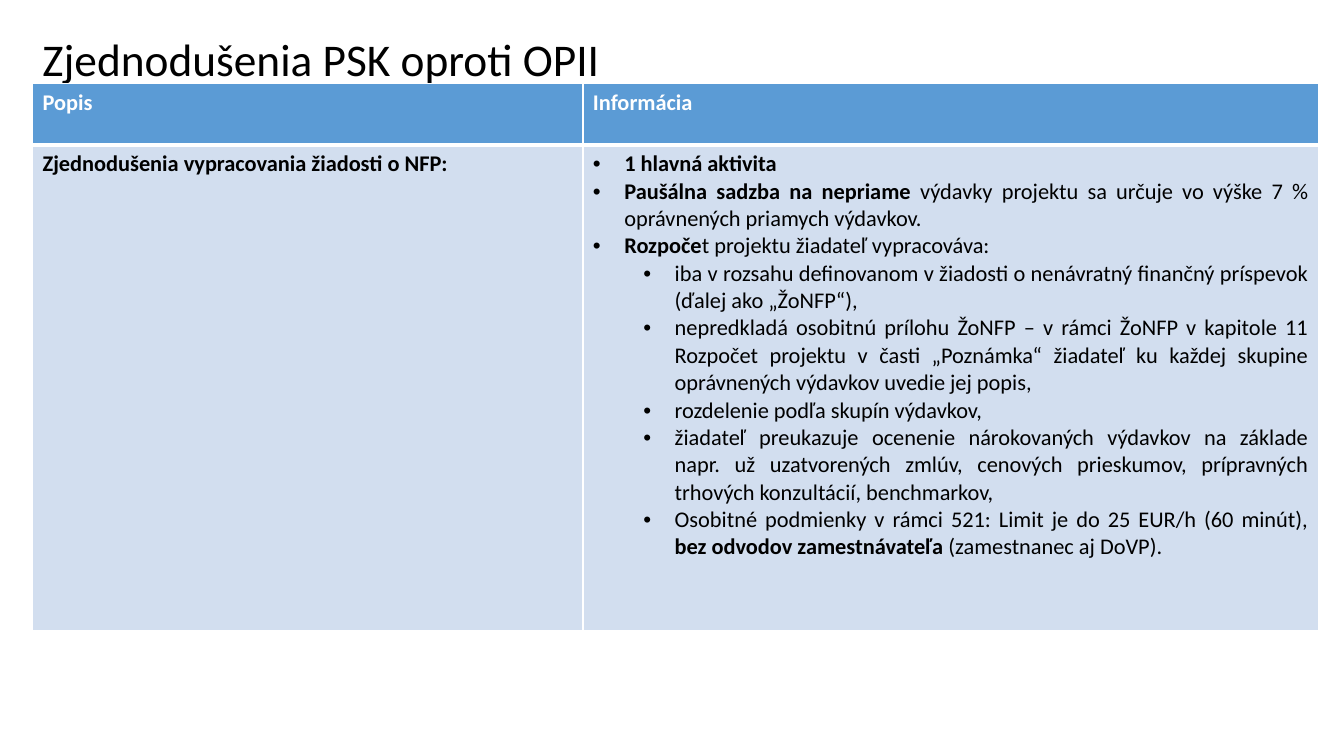
from dataclasses import dataclass

from lxml.etree import SubElement
from pptx import Presentation
from pptx.dml.color import RGBColor
from pptx.enum.text import MSO_ANCHOR, PP_ALIGN
from pptx.oxml.ns import qn
from pptx.slide import Slide
from pptx.table import Table, _Cell
from pptx.text.text import _Paragraph, _Run
from pptx.util import Cm, Pt

BLACK = RGBColor(0x00, 0x00, 0x00)
WHITE = RGBColor(0xFF, 0xFF, 0xFF)
HEADER_BLUE = RGBColor(0x5B, 0x9B, 0xD5)
BODY_BLUE = RGBColor(0xD2, 0xDE, 0xEF)

FONT = "Calibri"
LEFT = Cm(0.82)
COLUMN_WIDTHS = (Cm(13.87), Cm(18.54))
ROW_HEIGHTS = (Cm(1.55), Cm(12.22))
HEADINGS = ("Popis", "Informácia")
TOPIC = "Zjednodušenia vypracovania žiadosti o NFP:"


@dataclass(frozen=True)
class Span:
    text: str
    bold: bool = False


@dataclass(frozen=True)
class Bullet:
    level: int
    spans: tuple[Span, ...]


BULLETS = (
    Bullet(0, (Span("1 hlavná aktivita", True),)),
    Bullet(0, (
        Span("Paušálna sadzba na nepriame ", True),
        Span("výdavky projektu sa určuje vo výške 7 % oprávnených priamych výdavkov."),
    )),
    Bullet(0, (Span("Rozpoče", True), Span("t projektu žiadateľ vypracováva:"))),
    Bullet(1, (Span(
        "iba v rozsahu definovanom v žiadosti o nenávratný finančný príspevok "
        "(ďalej ako „ŽoNFP“), "
    ),)),
    Bullet(1, (Span(
        "nepredkladá osobitnú prílohu ŽoNFP – v rámci ŽoNFP v kapitole 11 "
        "Rozpočet projektu v časti „Poznámka“ žiadateľ ku každej skupine "
        "oprávnených výdavkov uvedie jej popis,"
    ),)),
    Bullet(1, (Span("rozdelenie podľa skupín výdavkov,"),)),
    Bullet(1, (Span(
        "žiadateľ preukazuje ocenenie nárokovaných výdavkov na základe napr. "
        "už uzatvorených zmlúv, cenových prieskumov, prípravných trhových "
        "konzultácií, benchmarkov,"
    ),)),
    Bullet(1, (
        Span("Osobitné podmienky v rámci 521: Limit je do 25 EUR/h (60 minút), "),
        Span("bez odvodov zamestnávateľa", True),
        Span(" (zamestnanec aj DoVP)."),
    )),
)


def format_run(run: _Run, size: float, color: RGBColor, bold: bool = False) -> None:
    run.font.name = FONT
    run.font.size = Pt(size)
    run.font.bold = bold
    run.font.color.rgb = color


def add_title(page: Slide) -> None:
    box = page.shapes.add_textbox(LEFT, Cm(0.82), Cm(25.4), Cm(1.3))
    frame = box.text_frame
    frame.word_wrap = True
    frame.vertical_anchor = MSO_ANCHOR.MIDDLE
    frame.text = "Zjednodušenia PSK oproti OPII"
    para = frame.paragraphs[0]
    para.line_spacing = 0.9
    format_run(para.runs[0], 32.4, BLACK)
    trailing_space = para.add_run()
    trailing_space.text = " "
    format_run(trailing_space, 39.6, BLACK)


def style_cell(cell: _Cell, fill: RGBColor, top: float, bottom: float) -> None:
    properties = cell._tc.get_or_add_tcPr()
    widths = {"a:lnL": 1, "a:lnR": 1, "a:lnT": top, "a:lnB": bottom}
    for tag, width in widths.items():
        line = SubElement(properties, qn(tag), w=str(Pt(width)))
        solid = SubElement(line, qn("a:solidFill"))
        SubElement(solid, qn("a:srgbClr"), val=str(WHITE))
    cell.fill.solid()
    cell.fill.fore_color.rgb = fill


def write_label(cell: _Cell, text: str, color: RGBColor) -> None:
    cell.text_frame.text = text
    format_run(cell.text_frame.paragraphs[0].runs[0], 16, color, True)


def write_bullet(para: _Paragraph, bullet: Bullet) -> None:
    para.alignment = PP_ALIGN.JUSTIFY
    para.level = bullet.level
    properties = para._p.get_or_add_pPr()
    properties.set("marL", str(Cm(0.79 + 1.27 * bullet.level)))
    properties.set("indent", str(-Cm(0.79)))
    SubElement(properties, qn("a:buFont"), typeface="Arial")
    SubElement(properties, qn("a:buChar"), char="•")
    for span in bullet.spans:
        run = para.add_run()
        run.text = span.text
        format_run(run, 16, BLACK, span.bold)


def fill_table(table: Table) -> None:
    for column, width in zip(table.columns, COLUMN_WIDTHS):
        column.width = width
    for row, height in zip(table.rows, ROW_HEIGHTS):
        row.height = height
    for index, heading in enumerate(HEADINGS):
        style_cell(table.cell(0, index), HEADER_BLUE, 1, 3)
        style_cell(table.cell(1, index), BODY_BLUE, 3, 1)
        write_label(table.cell(0, index), heading, WHITE)
    write_label(table.cell(1, 0), TOPIC, BLACK)
    frame = table.cell(1, 1).text_frame
    for index, bullet in enumerate(BULLETS):
        para = frame.add_paragraph() if index else frame.paragraphs[0]
        write_bullet(para, bullet)


def main() -> None:
    deck = Presentation()
    deck.slide_width = Cm(33.87)
    deck.slide_height = Cm(19.05)
    page = deck.slides.add_slide(deck.slide_layouts[6])
    add_title(page)
    graphic = page.shapes.add_table(
        len(ROW_HEIGHTS), len(COLUMN_WIDTHS), LEFT, Cm(2.11),
        sum(COLUMN_WIDTHS), sum(ROW_HEIGHTS),
    )
    fill_table(graphic.table)
    deck.save("out.pptx")


if __name__ == "__main__":
    main()
